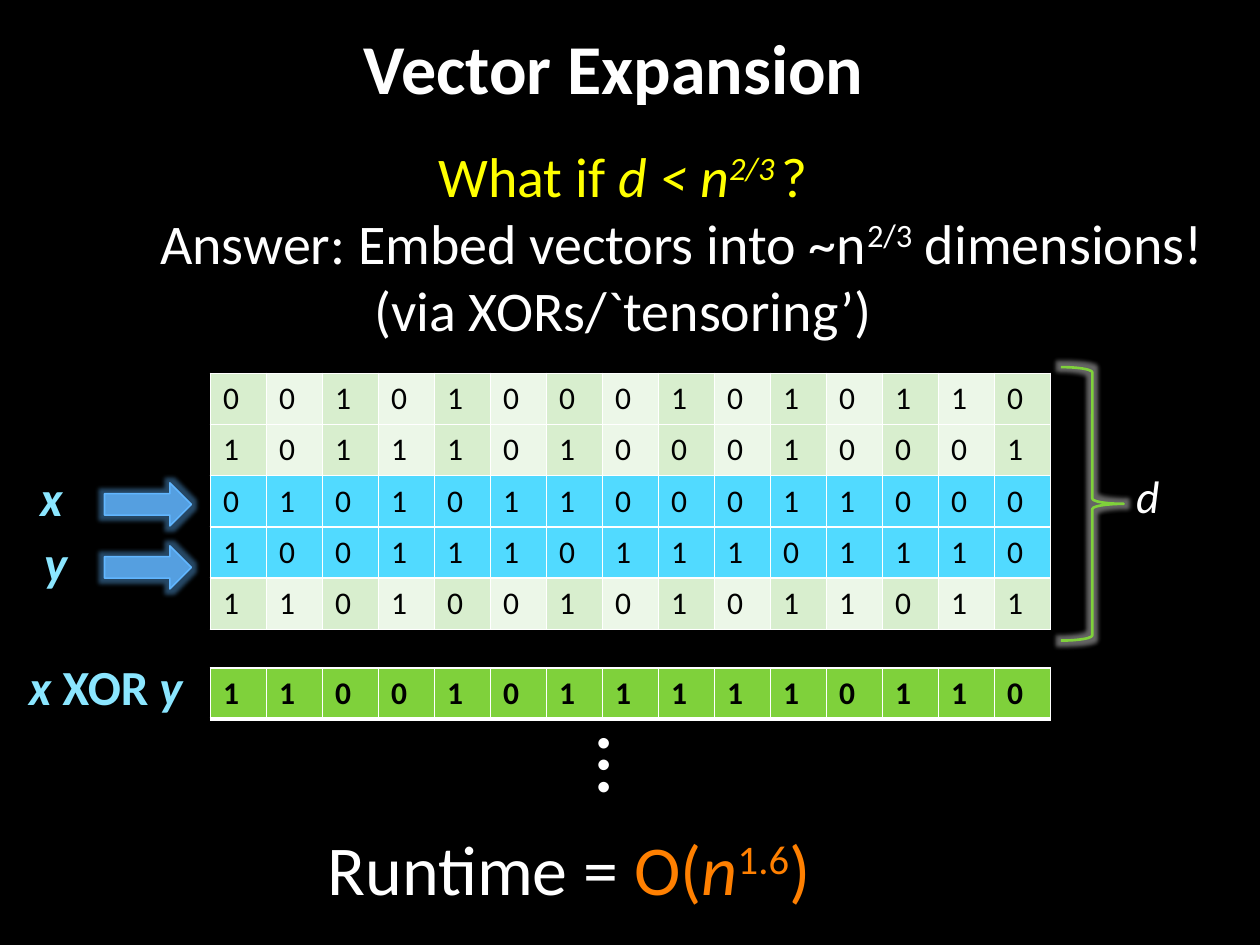
from dataclasses import dataclass
from typing import NamedTuple

from lxml import etree
from pptx import Presentation, util as u
from pptx.dml.color import RGBColor
from pptx.enum import shapes, text
from pptx.oxml import ns


@dataclass(frozen=True)
class Theme:
    """Colours and type sizes of the slide."""
    font: str = "Calibri"
    back: str = "000000"
    light: str = "FFFFFF"
    dark: str = "000000"
    question: str = "FFFF00"
    runtime: str = "FF8001"
    label: str = "8BE6FF"
    arrow: str = "61B6FF"
    green: str = "7FD13B"
    picked: str = "51DAFF"
    bands: tuple = ("D8EECE", "ECF7E8")
    big: int = 40
    body: int = 32
    name: int = 28
    size: int = 26
    cell: int = 18
    dots: int = 50


class Box(NamedTuple):
    """A rectangle in EMU."""
    x: int
    y: int
    w: int
    h: int

    def within(self, x, y, w, h, cols=100, rows=100):
        """Return the box at a column and row of a grid laid over this one."""
        cw, rh = self.w / cols, self.h / rows
        return Box(*(round(v) for v in (self.x + x * cw, self.y + y * rh, w * cw, h * rh)))


T = Theme()
BITS = ["001010001010110", "101110100010001", "010101100011000",
        "100111011101110", "110100101011011"]
PICKED = slice(2, 4)
XOR = ["".join(str(int(a) ^ int(b)) for a, b in zip(*BITS[PICKED]))]
COLS = len(BITS[0])


def write(p, words, size, color=T.light, bold=False, italic=False, raised=False):
    """Add one formatted run to a paragraph."""
    r = p.add_run()
    r.text = words
    f = r.font
    f.name, f.size, f.bold, f.italic = T.font, u.Pt(size), bold, italic
    f.color.rgb = RGBColor.from_string(color)
    if raised:
        r._r.get_or_add_rPr().set("baseline", "30000")


def place(sp, box):
    """Move a shape into a box."""
    sp.left, sp.top, sp.width, sp.height = box


def label(s, box, runs, wrap=False, **fmt):
    """Add a text box with one paragraph made of (words, format) runs."""
    sp = s.shapes.add_textbox(*box)
    tf = sp.text_frame
    tf.word_wrap = wrap
    for words, own in runs:
        write(tf.paragraphs[0], words, **{**fmt, **own})
    return sp


def sub(parent, tag, **attrs):
    """Append a DrawingML element."""
    return etree.SubElement(parent, ns.qn(tag), attrs)


def glow(sp, color, alpha, radius):
    """Give a shape a soft glow in place of a shadow."""
    sp.shadow.inherit = False
    effects = sp._element.spPr.find(ns.qn("a:effectLst"))
    halo = sub(effects, "a:glow", rad=str(u.Pt(radius)))
    sub(sub(halo, "a:srgbClr", val=color), "a:alpha", val=str(alpha * 1000))


def bit_table(s, box, rows, fills, bold=False, bottom=1):
    """Add a table of bits whose column fills cycle through the given colours."""
    table = s.shapes.add_table(len(rows), COLS, *box).table
    table.first_row = table.horz_banding = False
    for col in table.columns:
        col.width = round(box.w / COLS)
    for i, bits in enumerate(rows):
        table.rows[i].height = round(box.h / len(rows))
        for j, bit in enumerate(bits):
            cell = table.cell(i, j)
            for side, width in zip("LRTB", (1, 1, 1, bottom)):
                ln = sub(cell._tc.get_or_add_tcPr(), f"a:ln{side}", w=str(u.Pt(width)))
                sub(sub(ln, "a:solidFill"), "a:srgbClr", val=T.light)
            cell.fill.solid()
            cell.fill.fore_color.rgb = RGBColor.from_string(fills[j % len(fills)])
            write(cell.text_frame.paragraphs[0], bit, T.cell, T.dark, bold)


def arrow(s, box):
    """Add a glowing, slightly transparent arrow."""
    sp = s.shapes.add_shape(shapes.MSO_SHAPE.RIGHT_ARROW, *box)
    sp.fill.solid()
    sp.fill.fore_color.rgb = sp.line.color.rgb = RGBColor.from_string(T.arrow)
    sp.line.width = u.Pt(0.94)
    fill = sp._element.spPr.find(ns.qn("a:solidFill"))
    sub(fill[0], "a:alpha", val="80000")
    glow(sp, T.arrow, 40, 5)


def heading(s, box):
    """Fill the title placeholder."""
    sp = s.shapes.title
    place(sp, box)
    p = sp.text_frame.paragraphs[0]
    p.alignment = text.PP_ALIGN.CENTER
    write(p, "Vector Expansion", T.big, bold=True)


def question(s, box):
    """Fill the body placeholder with the question and its answer."""
    sp = s.placeholders[1]
    place(sp, box)
    tf = sp.text_frame
    tf.auto_size = text.MSO_AUTO_SIZE.NONE
    yellow = {"color": T.question}
    slanted = {**yellow, "italic": True}
    lines = [
        (3.21, [("What if ", yellow), ("d < n", slanted),
                ("2/3 ", {**slanted, "raised": True}), ("?", yellow)]),
        (1, [("Answer: Embed vectors into ~n", {}), ("2/3", {"raised": True}),
             (" dimensions!", {})]),
        (2.7, [("(via XORs/`tensoring’)", {})]),
    ]
    for i, (indent, runs) in enumerate(lines):
        p = tf.add_paragraph() if i else tf.paragraphs[0]
        p.space_before = u.Pt(0)
        pPr = p._p.get_or_add_pPr()
        pPr.set("marL", str(u.Inches(indent)))
        pPr.set("indent", "0")
        sub(pPr, "a:buNone")
        for words, fmt in runs:
            write(p, words, T.body, **fmt)


def matrix(s, box):
    """Draw the vectors, the picked pair x and y, and the brace for d."""
    grid = {"cols": COLS, "rows": len(BITS)}
    bit_table(s, box, BITS, T.bands)
    bit_table(s, box.within(0, 2, COLS, 2, **grid), BITS[PICKED], [T.picked])
    sp = s.shapes.add_shape(shapes.MSO_SHAPE.RIGHT_BRACE,
                            *box.within(15.18, -0.12, 1.12, 5.34, **grid))
    sp.fill.background()
    sp.line.color.rgb = RGBColor.from_string(T.green)
    sp.line.width = u.Pt(1.5)
    glow(sp, T.light, 40, 5)
    label(s, box.within(16.3, 1.72, 1.08, 1.33, **grid), [("d", {})],
          size=T.size, italic=True)
    for name, x, y, arrow_y in (("x", -3.26, 1.72, 2.14), ("y", -3.19, 2.98, 3.37)):
        arrow(s, box.within(-1.89, arrow_y, 1.55, 0.84, **grid))
        label(s, box.within(x, y, 1.1, 1.4, **grid), [(name, {})],
              size=T.name, color=T.label, bold=True, italic=True)


def xor_row(s, box):
    """Draw the combined vector, its label and the dots below it."""
    grid = {"cols": COLS, "rows": 1}
    bit_table(s, box, XOR, [T.green], bold=True, bottom=3)
    slanted = {"italic": True}
    label(s, box.within(-3.46, -0.34, 3.64, 1.4, **grid),
          [("x", slanted), (" XOR ", {}), ("y", slanted)],
          size=T.name, color=T.label, bold=True)
    dots = label(s, box.within(6.7, 0.86, 1.71, 2.32, **grid), [("…", {})], size=T.dots)
    dots.rotation = 90


def runtime(s, box):
    """State the running time."""
    orange = {"color": T.runtime}
    label(s, box, [("Runtime = ", {}), ("O(", orange), ("n", {**orange, "italic": True}),
                   ("1.6", {**orange, "raised": True}), (")", orange)],
          wrap=True, size=T.big)


def main():
    """Build and save the slide."""
    prs = Presentation()
    prs.slide_width, prs.slide_height = u.Inches(10), u.Inches(7.5)
    s = prs.slides.add_slide(prs.slide_layouts[1])
    s.background.fill.solid()
    s.background.fill.fore_color.rgb = RGBColor.from_string(T.back)
    page = Box(0, 0, prs.slide_width, prs.slide_height)
    heading(s, page.within(0.8, 1.9, 95.8, 10.3))
    question(s, page.within(1.7, 14.3, 98, 23.3))
    matrix(s, page.within(16.7, 39.5, 66.7, 27.1))
    xor_row(s, page.within(16.7, 70.7, 66.7, 5.4))
    runtime(s, page.within(25, 86.7, 72.5, 10.3))
    prs.save("out.pptx")


if __name__ == "__main__":
    main()
